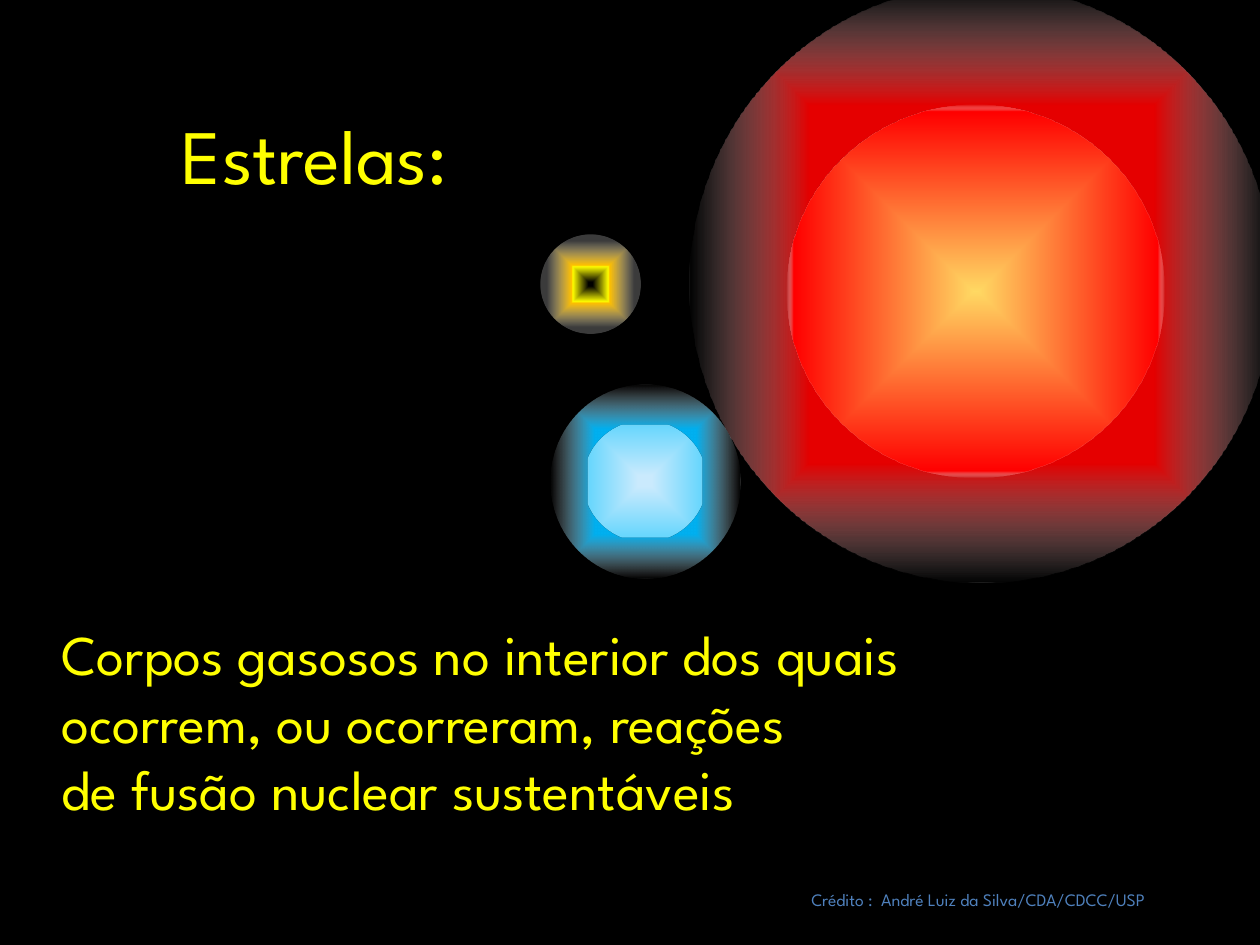
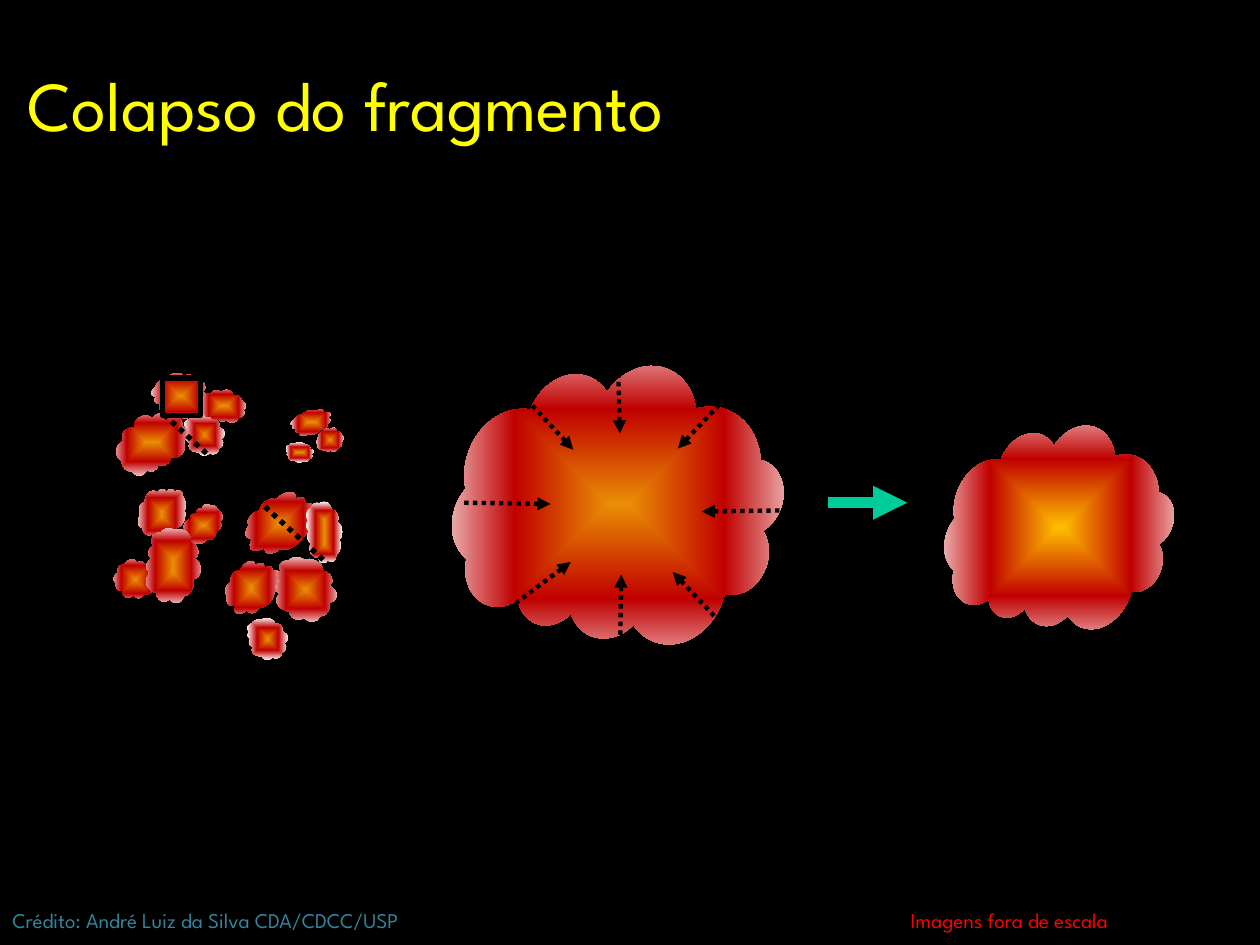
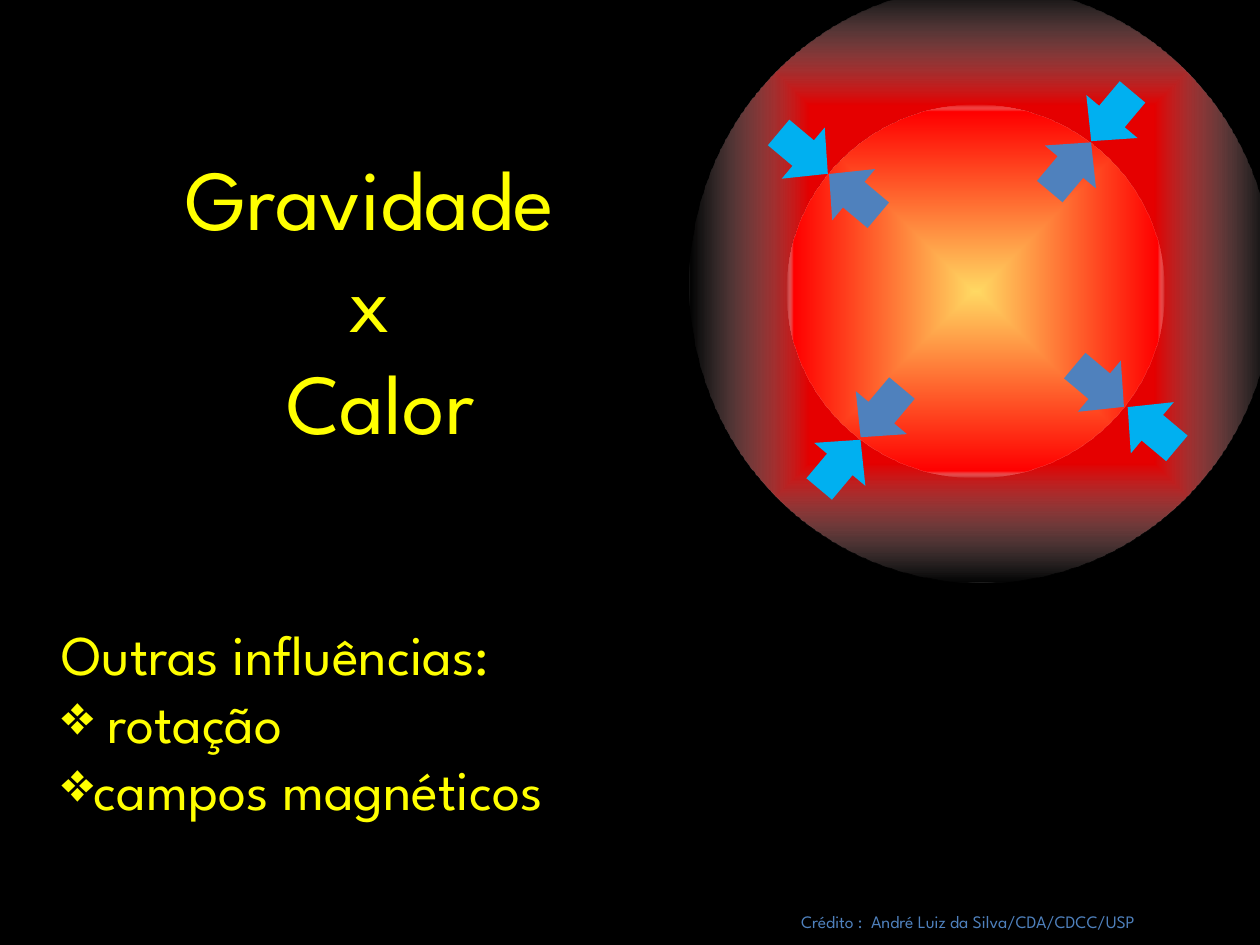
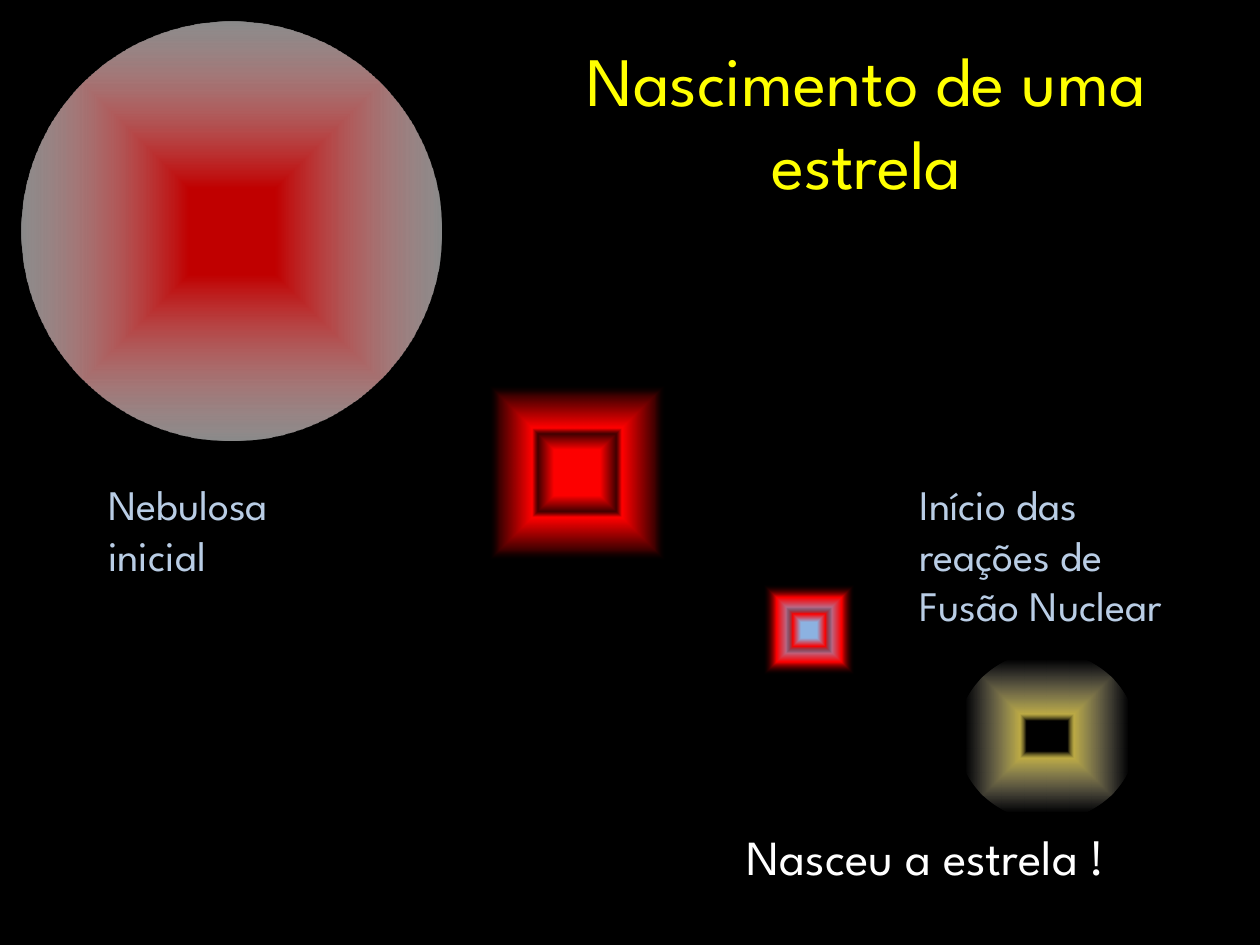
"""Four slides about how stars are born."""
from typing import NamedTuple, Optional

from lxml import etree
from pptx import Presentation
from pptx import util as u
from pptx.dml import color as dml
from pptx.enum import dml as line_styles
from pptx.enum import shapes, text
from pptx.oxml import ns

FONT = "League Spartan"
COLORS = {
    "black": "000000", "white": "FFFFFF", "yellow": "FFFF00", "red": "FF0000",
    "crimson": "C00000", "maroon": "420000", "orange": "EA8D04", "gold": "FFC000",
    "sand": "FFD963", "straw": "FDE65D", "sky": "00B0F0", "ice": "CCECFF",
    "aqua": "69D8FF", "steel": "4F81BD", "teal": "31859C", "mint": "00CC99",
    "haze": "B9CDE5", "periwinkle": "8EB4E3",
}
SHAPE = shapes.MSO_SHAPE
ALIGN = text.PP_ALIGN
TOP, MIDDLE = text.MSO_ANCHOR.TOP, text.MSO_ANCHOR.MIDDLE


class Box(NamedTuple):
    """Place and size in inches."""
    left: float
    top: float
    width: float
    height: float


class Stop(NamedTuple):
    """Gradient stop: position and opacity in percent."""
    position: int
    color: str
    opacity: int = 100


class Orb(NamedTuple):
    """Glowing disc."""
    box: Box
    glow: tuple


class Cloud(NamedTuple):
    """Gas cloud and its rotation."""
    box: Box
    rotation: float


class Ray(NamedTuple):
    """Straight line between two points, in inches."""
    x1: float
    y1: float
    x2: float
    y2: float


HALO_END = (Stop(100, "white", 0), Stop(100, "white"))
RED_GIANT = (
    Orb(Box(5.47, -0.11, 4.63, 4.73), (Stop(59, "red", 89), *HALO_END)),
    Orb(Box(6.24, 0.83, 3, 2.96), (Stop(0, "sand"), Stop(96, "red"), Stop(100, "white", 0))),
)
BLUE_STAR = (
    Orb(Box(4.37, 3.05, 1.51, 1.54), (Stop(53, "sky"), *HALO_END)),
    Orb(Box(4.63, 3.34, 0.98, 0.96), (Stop(9, "ice"), Stop(91, "aqua"), Stop(93, "white", 0))),
)
YELLOW_STAR = Orb(Box(4.29, 1.86, 0.79, 0.79), (
    Stop(4, "black"), Stop(35, "yellow"), Stop(38, "gold"), Stop(87, "white", 23)))
PROTOSTAR_GLOW = (Stop(36, "red"), Stop(36, "red"), Stop(61, "maroon"), Stop(70, "black", 0))
IGNITION_GLOW = (Stop(25, "periwinkle"), Stop(51, "red"), Stop(72, "black", 0))
PROTOSTAR = (Orb(Box(3.58, 2.75, 2, 2), PROTOSTAR_GLOW), Orb(Box(4.08, 3.25, 1, 1), PROTOSTAR_GLOW))
IGNITION = (Orb(Box(5.92, 4.5, 1, 1), IGNITION_GLOW), Orb(Box(6.17, 4.75, 0.5, 0.5), IGNITION_GLOW))
NEBULA = Orb(Box(0.17, 0.17, 3.33, 3.33), (
    Stop(11, "crimson"), Stop(20, "crimson"), Stop(100, "white", 54)))
NEWBORN = Orb(Box(7.6, 5.17, 1.42, 1.34), (
    Stop(18, "black"), Stop(26, "straw", 74), Stop(90, "white", 0)))

GAS_GLOW = (Stop(0, "orange"), Stop(50, "crimson"), Stop(100, "white"))
HOT_GLOW = (Stop(0, "gold"), *GAS_GLOW[1:])
FRAGMENTS = (
    Cloud(Box(1.46, 3.29, 0.33, 0.32), 267.1),
    Cloud(Box(1.25, 2.93, 0.37, 0.42), 246),
    Cloud(Box(1.6, 3.09, 0.35, 0.26), 200.8),
    Cloud(Box(0.91, 3.29, 0.59, 0.44), 160.2),
    Cloud(Box(0.91, 4.44, 0.33, 0.32), 31.4),
    Cloud(Box(1.1, 3.87, 0.37, 0.42), 10.3),
    Cloud(Box(1.44, 4.04, 0.35, 0.26), 325.2),
    Cloud(Box(1.08, 4.27, 0.59, 0.44), 284.6),
    Cloud(Box(2.3, 3.48, 0.16, 0.22), 267.1),
    Cloud(Box(2.38, 3.19, 0.19, 0.32), 246),
    Cloud(Box(2.52, 3.39, 0.2, 0.2), 200.8),
    Cloud(Box(1.81, 4.44, 0.37, 0.46), 31.4),
    Cloud(Box(2.01, 3.86, 0.42, 0.6), 50),
    Cloud(Box(2.33, 4.08, 0.49, 0.29), 270),
    Cloud(Box(2.18, 4.43, 0.49, 0.5), 284.6),
    Cloud(Box(1.96, 4.91, 0.33, 0.32), 267.1),
)
ENLARGED_FRAGMENT = Cloud(Box(3.65, 2.87, 2.53, 2.26), 200.8)
COLLAPSED_FRAGMENT = Cloud(Box(7.55, 3.35, 1.73, 1.67), 200.8)
ZOOM_GUIDES = (Ray(1.56, 3, 3.58, 2.65), Ray(1.3, 3.29, 3.56, 5.35))
ZOOM_FRAMES = (Box(1.29, 3, 0.3, 0.3), Box(3.55, 2.65, 2.71, 2.71))
SCALE_BRACES = (Box(8.07, 4.62, 0.55, 1.34), Box(4.65, 4.42, 0.55, 2.83))
INFALL = (
    Ray(4.92, 3.44, 4.9, 2.7), Ray(5.38, 3.56, 5.87, 3.04),
    Ray(4.55, 3.57, 4.06, 3.04), Ray(4.93, 4.56, 4.92, 5.32),
    Ray(5.57, 4.06, 6.26, 4.05), Ray(5.34, 4.54, 5.82, 5.05),
    Ray(4.37, 4, 3.66, 3.99), Ray(4.53, 4.46, 3.97, 4.88),
)
HEAT_ARROWS = ((6.73, 3.02), (6.51, 1.29), (8.23, 1.07), (8.46, 2.81))
GRAVITY_ARROWS = ((8.56, 0.67), (8.88, 3.14), (6.4, 3.43), (6.11, 0.96))
STATEMENT = Box(0.39, 4.87, 9.14, 1.72)
CREDIT = "Crédito :  André Luiz da Silva/CDA/CDCC/USP"


def rgb(name: str) -> dml.RGBColor:
    """Look up a colour of the palette."""
    return dml.RGBColor.from_string(COLORS[name])


def inches(box: Box) -> list:
    """Turn a box into lengths."""
    return [u.Inches(length) for length in box]


def add_node(parent, tag: str, **attributes):
    """Append a drawing element with attributes."""
    return etree.SubElement(parent, ns.qn(tag), {k: str(v) for k, v in attributes.items()})


def write(frame, content: str, *, size: float, color: str, align=ALIGN.LEFT, anchor=TOP,
          wrap: bool = True, bullet: str = "", bullet_from: int = 1) -> None:
    """Fill a text frame, with bullets from the given paragraph on."""
    frame.word_wrap = wrap
    frame.auto_size = text.MSO_AUTO_SIZE.NONE
    frame.vertical_anchor = anchor
    frame.text = content
    for index, paragraph in enumerate(frame.paragraphs):
        paragraph.alignment = align
        for run in paragraph.runs:
            run.font.name, run.font.size = FONT, u.Pt(size)
            run.font.color.rgb = rgb(color)
        if bullet and index >= bullet_from:
            properties = paragraph._p.get_or_add_pPr()
            properties.set("marL", "0")
            properties.set("indent", "0")
            add_node(properties, "a:buChar", char=bullet)


def add_text(owner, box: Box, content: str, **style) -> None:
    """Add a text box to a slide or a group."""
    write(owner.shapes.add_textbox(*inches(box)).text_frame, content, **style)


def add_slide(deck, title: str, box: Box, *, size: float, align=ALIGN.CENTER, anchor=MIDDLE):
    """Add a black slide with a yellow title."""
    slide = deck.slides.add_slide(deck.slide_layouts[5])
    slide.background.fill.solid()
    slide.background.fill.fore_color.rgb = rgb("black")
    heading = slide.shapes.title
    heading.left, heading.top, heading.width, heading.height = inches(box)
    write(heading.text_frame, title, size=size, color="yellow", align=align, anchor=anchor)
    return slide


def add_figure(owner, kind, box: Box, *, rotation: float = 0, fill: Optional[str] = None,
               glow: tuple = (), outline: float = 0):
    """Add a preset shape with a plain fill, a glow or a black outline."""
    figure = owner.shapes.add_shape(kind, *inches(box))
    figure.shadow.inherit = False
    figure.rotation = rotation
    if glow:
        figure.fill.gradient()
        paint_glow(figure._element.spPr.find(ns.qn("a:gradFill")), glow)
    elif fill:
        figure.fill.solid()
        figure.fill.fore_color.rgb = rgb(fill)
    else:
        figure.fill.background()
    if outline:
        figure.line.color.rgb = rgb("black")
        figure.line.width = u.Pt(outline)
    else:
        figure.line.fill.background()
    return figure


def paint_glow(gradient, glow: tuple) -> None:
    """Write a gradient that spreads from the centre."""
    gradient.clear()
    gradient.set("rotWithShape", "0")
    stops = add_node(gradient, "a:gsLst")
    for stop in glow:
        entry = add_node(stops, "a:gs", pos=stop.position * 1000)
        tone = add_node(entry, "a:srgbClr", val=COLORS[stop.color])
        if stop.opacity < 100:
            add_node(tone, "a:alpha", val=stop.opacity * 1000)
    spread = add_node(gradient, "a:path", path="shape")
    add_node(spread, "a:fillToRect", l=50000, t=50000, r=50000, b=50000)


def add_orb(owner, orb: Orb) -> None:
    """Add one glowing disc."""
    add_figure(owner, SHAPE.OVAL, orb.box, glow=orb.glow)


def add_star(slide, layers: tuple):
    """Add a star as a group of discs."""
    star = slide.shapes.add_group_shape()
    for orb in layers:
        add_orb(star, orb)
    return star


def add_cloud(slide, cloud: Cloud, glow: tuple = GAS_GLOW) -> None:
    """Add one gas cloud."""
    add_figure(slide, SHAPE.CLOUD, cloud.box, rotation=cloud.rotation, glow=glow)


def add_ray(slide, ray: Ray, *, width: float, color: str = "black", dotted: bool = True,
            arrow: str = "") -> None:
    """Add a line; arrow is 'a:headEnd' or 'a:tailEnd'."""
    line = slide.shapes.add_connector(shapes.MSO_CONNECTOR.STRAIGHT, *inches(ray))
    line.line.color.rgb = rgb(color)
    line.line.width = u.Pt(width)
    if dotted:
        line.line.dash_style = line_styles.MSO_LINE.ROUND_DOT
        line.line._ln.find(ns.qn("a:prstDash")).set("val", "sysDot")
    if arrow:
        add_node(line.line._ln, arrow, type="triangle")
    add_node(line._element.spPr, "a:effectLst")


def build_definition(deck) -> None:
    """What a star is."""
    slide = add_slide(deck, "Estrelas:", Box(0.31, 0.47, 4.38, 1.5), size=44)
    add_text(slide, STATEMENT, "Corpos gasosos no interior dos quais\n"
             "ocorrem, ou ocorreram, reações \nde fusão nuclear sustentáveis",
             size=32, color="yellow", align=ALIGN.JUSTIFY)
    add_star(slide, RED_GIANT)
    add_star(slide, BLUE_STAR)
    add_orb(slide, YELLOW_STAR)
    add_text(slide, Box(6.34, 7.01, 3.65, 0.27), CREDIT, size=10, color="steel")


def build_collapse(deck) -> None:
    """A cloud fragment falls in on itself."""
    slide = add_slide(deck, "Colapso do fragmento", Box(0.12, 0.44, 9.88, 0.77),
                      size=40, align=ALIGN.LEFT, anchor=TOP)
    add_text(slide, Box(0, 7.15, 10, 0.3), "Crédito: André Luiz da Silva CDA/CDCC/USP",
             size=12, color="teal")
    for fragment in FRAGMENTS:
        add_cloud(slide, fragment)
    add_ray(slide, Ray(6.57, 3.99, 7.2, 3.99), width=6.5, color="mint", dotted=False,
            arrow="a:tailEnd")
    add_cloud(slide, ENLARGED_FRAGMENT)
    for guide in ZOOM_GUIDES:
        add_ray(slide, guide, width=3)
    add_cloud(slide, COLLAPSED_FRAGMENT, HOT_GLOW)
    for ray in INFALL:
        add_ray(slide, ray, width=2.5, arrow="a:headEnd")
    for frame in ZOOM_FRAMES:
        add_figure(slide, SHAPE.RECTANGLE, frame, outline=3)
    add_text(slide, Box(7.13, 7.15, 2.83, 0.3), "Imagens fora de escala", size=12, color="red")
    for box in SCALE_BRACES:
        brace = add_figure(slide, SHAPE.LEFT_BRACE, box, rotation=270, outline=2)
        brace.adjustments[0], brace.adjustments[1] = 0.44, 0.48


def build_balance(deck) -> None:
    """Gravity against heat."""
    slide = add_slide(deck, "Gravidade \vx \vCalor", Box(0.83, 1.62, 4.38, 1.5), size=48.6)
    add_text(slide, STATEMENT, "Outras influências: \n rotação \ncampos magnéticos ",
             size=32, color="yellow", align=ALIGN.JUSTIFY, bullet="❖")
    add_star(slide, RED_GIANT)
    add_text(slide, Box(6.26, 7.18, 3.65, 0.27), CREDIT, size=10, color="steel")
    for color, corners in (("steel", HEAT_ARROWS), ("sky", GRAVITY_ARROWS)):
        for turn, corner in enumerate(corners):
            add_figure(slide, SHAPE.DOWN_ARROW, Box(*corner, 0.53, 0.51),
                       rotation=40 + 90 * turn, fill=color)


def build_birth(deck) -> None:
    """From nebula to newborn star."""
    slide = add_slide(deck, "Nascimento de uma\vestrela", Box(3.75, 0.33, 6.25, 1.25), size=39.6)
    add_star(slide, PROTOSTAR)
    add_star(slide, IGNITION)
    add_text(slide, Box(7.2, 3.75, 2.52, 1.31), "Início das\nreações de\nFusão Nuclear",
             size=24, color="haze", wrap=False)
    add_text(slide, Box(5.83, 6.51, 3.92, 0.57), "Nasceu a estrela !", size=28, color="white")
    nebula = add_star(slide, (NEBULA,))
    add_text(nebula, Box(0.76, 3.75, 1.76, 0.91), "Nebulosa\ninicial",
             size=24, color="haze", wrap=False)
    add_orb(slide, NEWBORN)


def main() -> None:
    """Build and save the presentation."""
    deck = Presentation()
    deck.slide_width, deck.slide_height = u.Inches(10), u.Inches(7.5)
    for build in (build_definition, build_collapse, build_balance, build_birth):
        build(deck)
    deck.save("out.pptx")


if __name__ == "__main__":
    main()
